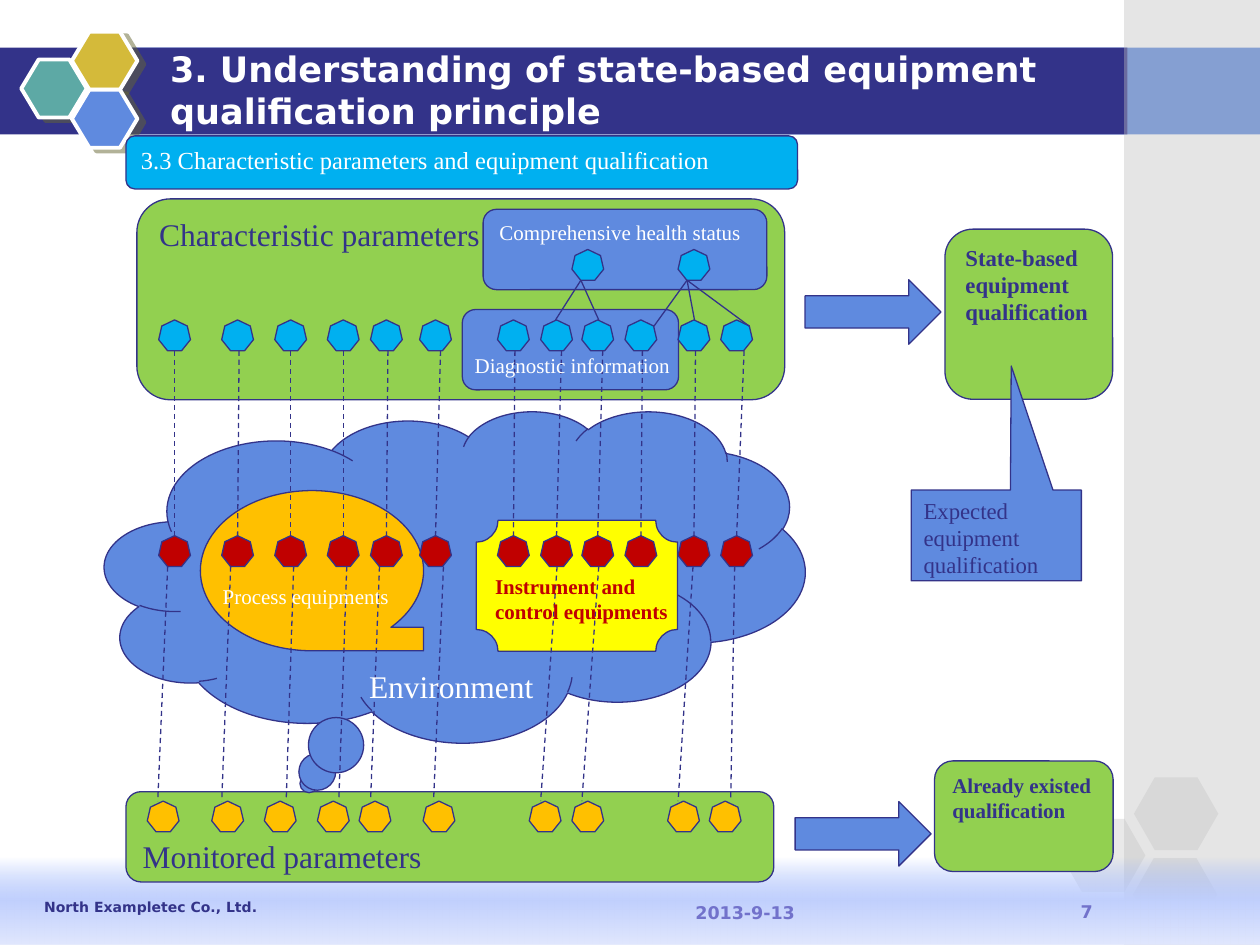
from collections import namedtuple

from lxml.etree import SubElement
from pptx import Presentation
from pptx.dml.color import RGBColor
from pptx.enum.dml import MSO_LINE
from pptx.enum.shapes import MSO_CONNECTOR, MSO_SHAPE
from pptx.enum.text import MSO_ANCHOR, PP_ALIGN
from pptx.oxml import parse_xml
from pptx.oxml.ns import nsdecls, qn
from pptx.util import Cm, Pt

COLORS = {
    "navy": "333389", "blue": "5F8ADF", "green": "92D050", "cyan": "00B0F0",
    "orange": "FFC000", "yellow": "FFFF00", "red": "C00000", "white": "FFFFFF",
    "gray": "C0C0C0", "teal": "5DA9A5", "gold": "D4BA3A", "lilac": "7272CB",
    "olive": "666633", "sky": "9AB4FD", "mist": "C1D0FD", "haze": "E1E7FD",
}
SERIF, SANS = "Times New Roman", "DejaVu Sans"
Box = namedtuple("Box", "left top width height")


def within(box, left, top, width, height):
    """Return a box placed relative to the corner of another box."""
    return Box(box.left + left, box.top + top, width, height)


def lengths(box):
    """Return the four measures of a box as lengths."""
    return [Cm(value) for value in box]


def color(name):
    """Return the named colour."""
    return RGBColor.from_string(COLORS[name])


def write(shape, text, size=12, ink="white", font=SERIF, bold=False,
          anchor=MSO_ANCHOR.TOP, align=PP_ALIGN.LEFT, wrap=True):
    """Write formatted text into a shape."""
    frame = shape.text_frame
    frame.word_wrap = wrap
    frame.vertical_anchor = anchor
    paragraph = frame.paragraphs[0]
    paragraph.alignment = align
    run = paragraph.add_run()
    run.text = text
    run.font.size = Pt(size)
    run.font.name = font
    run.font.bold = bold
    run.font.color.rgb = color(ink)


def add_label(slide, box, text, **text_format):
    """Add a text box with formatted text."""
    write(slide.shapes.add_textbox(*lengths(box)), text, **text_format)


def add_block(slide, kind, box, fill, line="navy", weight=0.75, opacity=None, adjustments=()):
    """Add a filled preset shape without a shadow."""
    shape = slide.shapes.add_shape(kind, *lengths(box))
    shape.shadow.inherit = False
    shape.fill.solid()
    shape.fill.fore_color.rgb = color(fill)
    if opacity:
        fill_color = next(shape.element.spPr.iter(qn("a:srgbClr")))
        SubElement(fill_color, qn("a:alpha")).set("val", str(opacity * 1000))
    if line:
        shape.line.color.rgb = color(line)
        shape.line.width = Pt(weight)
    else:
        shape.line.fill.background()
    for index, value in enumerate(adjustments):
        shape.adjustments[index] = value
    return shape


def add_link(slide, start, end, dashed=False):
    """Add a thin line between two points."""
    connector = slide.shapes.add_connector(
        MSO_CONNECTOR.STRAIGHT, *[Cm(value) for value in (*start, *end)])
    connector.line.color.rgb = color("navy")
    connector.line.width = Pt(0.75)
    if dashed:
        connector.line.dash_style = MSO_LINE.DASH
    SubElement(connector.element.spPr, qn("a:effectLst"))


def add_node(slide, left, top, fill):
    """Add one heptagon node."""
    add_block(slide, MSO_SHAPE.HEPTAGON, Box(left, top, 0.64, 0.62), fill)


def draw_background(slide, box):
    """Draw the title bars, side band, pale hexagons and bottom glow."""
    add_block(slide, MSO_SHAPE.RECTANGLE, within(box, 2.64, 0.96, 22.76, 1.75), "blue", line=None)
    add_block(slide, MSO_SHAPE.RECTANGLE, within(box, 0, 0.96, 22.73, 1.75), "navy", line=None)
    add_block(slide, MSO_SHAPE.RECTANGLE, within(box, 22.66, 0, 2.74, box.height),
              "gray", line=None, opacity=40)
    for left, top in ((21.39, 16.51), (22.86, 15.67), (22.84, 17.3)):
        add_block(slide, MSO_SHAPE.HEXAGON, within(box, left, top, 1.7, 1.47),
                  "gray", line=None, opacity=35, adjustments=[0.286])
    glow = add_block(slide, MSO_SHAPE.RECTANGLE, within(box, 0, 17.3, box.width, 1.75),
                     "mist", line=None)
    properties = glow.element.spPr
    gradient = parse_xml(
        f'<a:gradFill {nsdecls("a")} rotWithShape="1"><a:gsLst>'
        f'<a:gs pos="0"><a:srgbClr val="{COLORS["sky"]}"><a:alpha val="0"/></a:srgbClr></a:gs>'
        f'<a:gs pos="50000"><a:srgbClr val="{COLORS["mist"]}"/></a:gs>'
        f'<a:gs pos="100000"><a:srgbClr val="{COLORS["haze"]}"/></a:gs>'
        '</a:gsLst><a:lin ang="5400000" scaled="0"/></a:gradFill>')
    properties.replace(properties.find(qn("a:solidFill")), gradient)


def draw_header(slide, box):
    """Draw the hexagon cluster and the slide title."""
    for left, top, fill in ((0, 0.56, "teal"), (1.02, 0, "gold"), (1.02, 1.17, "blue")):
        hexagon = add_block(slide, MSO_SHAPE.HEXAGON, within(box, left, top, 1.32, 1.17),
                            fill, line="white", weight=2.25, adjustments=[0.3])
        effects = hexagon.element.spPr.find(qn("a:effectLst"))
        effects.append(parse_xml(
            f'<a:outerShdw {nsdecls("a")} blurRad="0" dist="{Pt(4.5)}" dir="1620000" '
            f'algn="ctr" rotWithShape="0"><a:srgbClr val="{COLORS["olive"]}">'
            '<a:alpha val="50000"/></a:srgbClr></a:outerShdw>'))
    add_label(slide, within(box, 2.75, 0.43, 21.4, 1.47),
              "3. Understanding of state-based equipment qualification principle",
              size=20, font=SANS, bold=True, anchor=MSO_ANCHOR.MIDDLE)


def draw_footer(slide, box):
    """Draw the company name, date and slide number."""
    style = {"font": SANS, "bold": True}
    add_label(slide, within(box, 0, 0, 9.1, 0.6), "North Exampletec Co., Ltd.",
              size=8, ink="navy", **style)
    add_label(slide, within(box, 13.13, 0.07, 6.99, 0.64), "2013-9-13",
              size=10, ink="lilac", **style)
    add_label(slide, within(box, 20.53, 0.05, 1.47, 0.74), "7",
              size=10, ink="lilac", align=PP_ALIGN.CENTER, **style)


def draw_panels(slide, box):
    """Draw the parameter panels, the cloud and the equipment shapes."""
    rounded = MSO_SHAPE.ROUNDED_RECTANGLE
    monitored = add_block(slide, rounded, within(box, 0, 11.95, 13.06, 1.82), "green")
    monitored.text_frame.margin_bottom = Cm(0.05)
    write(monitored, "Monitored parameters", size=18, ink="navy", anchor=MSO_ANCHOR.BOTTOM)
    characteristic = add_block(slide, rounded, within(box, 0.22, 0, 13.06, 4.05), "green")
    write(characteristic, "Characteristic parameters", size=18, ink="navy")
    health = add_block(slide, rounded, within(box, 7.2, 0.21, 5.72, 1.62), "blue")
    write(health, "Comprehensive health status")
    add_block(slide, rounded, within(box, 6.78, 2.23, 4.36, 1.62), "blue")
    add_block(slide, MSO_SHAPE.CLOUD_CALLOUT, within(box, -0.43, 4.27, 14.12, 6.68),
              "blue", adjustments=[-0.208, 0.625])
    add_block(slide, MSO_SHAPE.FLOWCHART_SEQUENTIAL_ACCESS_STORAGE,
              within(box, 1.5, 5.88, 4.5, 3.23), "orange")
    add_block(slide, MSO_SHAPE.PLAQUE, within(box, 7.06, 6.48, 4.06, 2.64), "yellow")


def draw_network(slide, box):
    """Draw the rows of nodes and the lines that join them."""
    summary, upper, middle, lower = (box.top + offset for offset in (1.02, 2.44, 6.79, 12.14))
    columns = ((0.66, 0), (1.93, 0.03), (3, 0), (4.06, 0), (4.93, 0.03), (5.92, 0.1),
               (7.49, 0.03), (8.36, 0.1), (9.19, 0.1), (10.06, 0.03), (11.13, 0.03), (11.99, 0.15))
    for offset, lean in columns:
        left = box.left + offset
        add_node(slide, left, middle, "red")
        add_node(slide, left, upper, "cyan")
        add_link(slide, (left + 0.32 + lean, upper + 0.62), (left + 0.32, middle), dashed=True)
    monitored = ((0.43, 0.84, 0.64), (1.73, 2.11, 1.93), (2.79, 3.38, 3.23), (3.86, 4.45, 4.29),
                 (4.7, 5.11, 4.93), (5.99, 6.4, 6.2), (8.13, 8.69, 8.36), (8.99, 9.53, 9.19),
                 (10.92, 11.43, 11.13), (11.76, 12.27, 12.19))
    for node, start, end in monitored:
        add_node(slide, box.left + node, lower, "orange")
        add_link(slide, (box.left + start, middle + 0.62), (box.left + end, lower), dashed=True)
    summaries = ((8.99, ((8.66, 0), (9.53, 0))),
                 (11.13, ((10.64, 0.13), (11.46, 0), (12.57, 0.13))))
    for node, ends in summaries:
        left = box.left + node
        add_node(slide, left, summary, "cyan")
        for end, drop in ends:
            add_link(slide, (left + 0.18, summary + 0.62), (box.left + end, upper + drop))


def draw_captions(slide, box):
    """Write the captions that lie over the diagram."""
    add_label(slide, within(box, 6.78, 2.97, 5.51, 0.76), "Diagnostic information")
    add_label(slide, within(box, 7.19, 7.42, 4.01, 1.27), "Instrument and control equipments",
              ink="red", bold=True)
    add_label(slide, within(box, 4.65, 9.32, 3.86, 1.02), "Environment", size=18, wrap=False)
    add_label(slide, within(box, 1.7, 7.62, 3.91, 0.76), "Process equipments", wrap=False)


def draw_outcomes(slide, box):
    """Draw the arrows, the qualification boxes and the callout."""
    for left, top in ((0.2, 1.02), (0, 11.54)):
        add_block(slide, MSO_SHAPE.RIGHT_ARROW, within(box, left, top, 2.74, 1.3), "blue")
    rounded = MSO_SHAPE.ROUNDED_RECTANGLE
    state = add_block(slide, rounded, within(box, 3.02, 0, 3.38, 3.43), "green")
    write(state, "State-based equipment qualification", size=13, ink="navy", bold=True)
    existing = add_block(slide, rounded, within(box, 2.81, 10.72, 3.6, 2.23), "green")
    write(existing, "Already existed qualification", ink="navy", bold=True)
    expected = add_block(slide, MSO_SHAPE.RECTANGULAR_CALLOUT, within(box, 2.34, 5.26, 3.43, 1.83),
                         "blue", adjustments=[0.088, -1.867])
    write(expected, "Expected equipment qualification", size=13, ink="navy")


def draw_section_banner(slide, box):
    """Draw the section heading."""
    banner = add_block(slide, MSO_SHAPE.ROUNDED_RECTANGLE, box, "cyan")
    write(banner, "3.3 Characteristic parameters and equipment qualification", size=14)


def main():
    """Build the slide and save it."""
    presentation = Presentation()
    presentation.slide_width, presentation.slide_height = Cm(25.4), Cm(19.05)
    slide = presentation.slides.add_slide(presentation.slide_layouts[6])
    draw_background(slide, Box(0, 0, 25.4, 19.05))
    draw_header(slide, Box(0.43, 0.64, 24.2, 2.34))
    draw_footer(slide, Box(0.64, 17.98, 22, 0.8))
    diagram = Box(2.54, 4.01, 13.69, 13.77)
    draw_panels(slide, diagram)
    draw_network(slide, diagram)
    draw_outcomes(slide, Box(16.03, 4.62, 6.41, 12.95))
    draw_section_banner(slide, Box(2.54, 2.74, 13.54, 1.07))
    draw_captions(slide, diagram)
    presentation.save("out.pptx")


if __name__ == "__main__":
    main()
